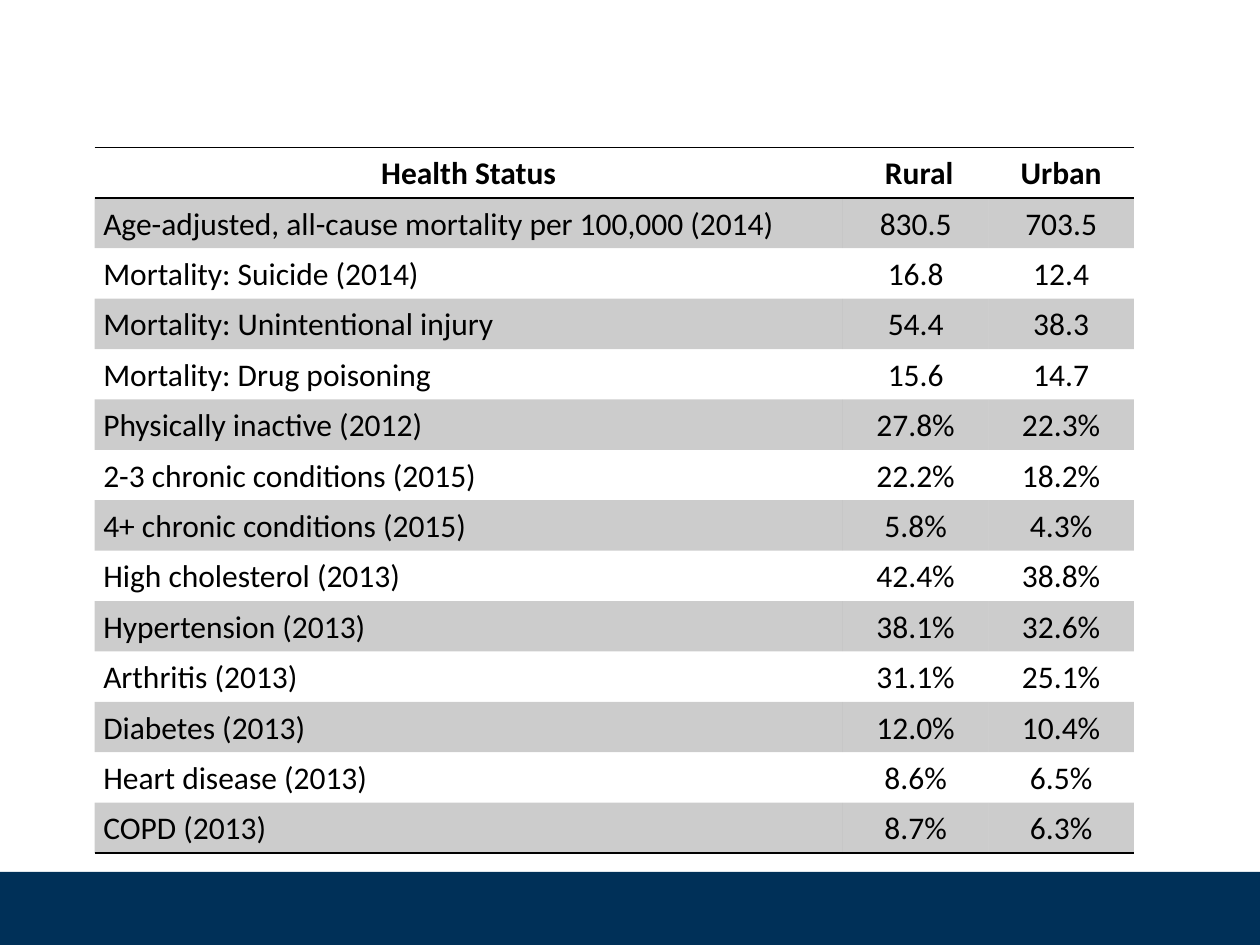
from lxml.etree import SubElement
from pptx import Presentation
from pptx.dml.color import RGBColor
from pptx.enum.shapes import MSO_SHAPE as Shape
from pptx.enum.text import MSO_ANCHOR as Anchor, PP_ALIGN as Align
from pptx.oxml.ns import qn
from pptx.util import Inches, Pt

BLACK = RGBColor(0x00, 0x00, 0x00)
NAVY = RGBColor(0x00, 0x30, 0x58)
NO_GRID_STYLE = "{2D5ABB26-0587-4C30-8999-92F81FD0307C}"
BAND_OPACITY = 20
COLUMN_SHARES = (0.72, 0.14, 0.14)

CELL_FORMAT = {
    "vertical_anchor": Anchor.MIDDLE,
    "margin_left": Inches(0.07),
    "margin_right": Inches(0.07),
    "margin_top": 0,
    "margin_bottom": 0,
}
FONT_FORMAT = {"name": "Calibri", "size": Pt(18)}

HEALTH_STATUS = [
    ("Health Status", " Rural", "Urban"),
    ("Age-adjusted, all-cause mortality per 100,000 (2014)", "830.5", "703.5"),
    ("Mortality: Suicide (2014)", "16.8", "12.4"),
    ("Mortality: Unintentional injury", "54.4", "38.3"),
    ("Mortality: Drug poisoning", "15.6", "14.7"),
    ("Physically inactive (2012)", "27.8%", "22.3%"),
    ("2-3 chronic conditions (2015)", "22.2%", "18.2%"),
    ("4+ chronic conditions (2015)", "5.8%", "4.3%"),
    ("High cholesterol (2013)", "42.4%", "38.8%"),
    ("Hypertension (2013)", "38.1%", "32.6%"),
    ("Arthritis (2013)", "31.1%", "25.1%"),
    ("Diabetes (2013)", "12.0%", "10.4%"),
    ("Heart disease (2013)", "8.6%", "6.5%"),
    ("COPD (2013)", "8.7%", "6.3%"),
]


def set_format(target, values):
    for attribute, value in values.items():
        setattr(target, attribute, value)


def add_border(cell, side):
    line = SubElement(cell._tc.get_or_add_tcPr(), qn(f"a:{side}"), w=str(Pt(1)))
    solid = SubElement(line, qn("a:solidFill"))
    SubElement(solid, qn("a:srgbClr"), val=str(BLACK))


def shade(cell):
    cell.fill.solid()
    cell.fill.fore_color.rgb = BLACK
    color = cell._tc.tcPr.find(qn("a:solidFill")).find(qn("a:srgbClr"))
    SubElement(color, qn("a:alpha"), val=str(BAND_OPACITY * 1000))


def write_cell(cell, text, header, centered):
    set_format(cell, CELL_FORMAT)
    cell.text = text
    paragraph = cell.text_frame.paragraphs[0]
    paragraph.alignment = Align.CENTER if centered else Align.LEFT
    paragraph.line_spacing = 1.07
    font = paragraph.runs[0].font
    set_format(font, FONT_FORMAT | {"bold": header})
    font.color.rgb = BLACK


def add_footer_band(slide, left, top, width, height):
    band = slide.shapes.add_shape(Shape.RECTANGLE, left, top, width, height)
    band.shadow.inherit = False
    band.fill.solid()
    band.fill.fore_color.rgb = NAVY
    band.line.fill.background()


def add_health_table(slide, left, top, width, height):
    last = len(HEALTH_STATUS) - 1
    frame = slide.shapes.add_table(
        len(HEALTH_STATUS), len(COLUMN_SHARES), left, top, width, height
    )
    table = frame.table
    table._tbl.tblPr.find(qn("a:tableStyleId")).text = NO_GRID_STYLE
    table.horz_banding = False
    for column, share in zip(table.columns, COLUMN_SHARES):
        column.width = int(width * share)
    for row, entries in enumerate(HEALTH_STATUS):
        for col, text in enumerate(entries):
            cell = table.cell(row, col)
            header = row == 0
            write_cell(cell, text, header, centered=header or col > 0)
            if header:
                add_border(cell, "lnT")
            if row in (0, last):
                add_border(cell, "lnB")
            if row % 2:
                shade(cell)
            else:
                cell.fill.background()


def main():
    deck = Presentation()
    deck.slide_width, deck.slide_height = Inches(10), Inches(7.5)
    slide = deck.slides.add_slide(deck.slide_layouts[6])
    add_footer_band(slide, 0, Inches(6.92), deck.slide_width, Inches(0.67))
    row_height = Inches(0.4)
    add_health_table(
        slide, Inches(0.75), Inches(1.17), Inches(8.25), row_height * len(HEALTH_STATUS)
    )
    deck.save("out.pptx")


if __name__ == "__main__":
    main()
